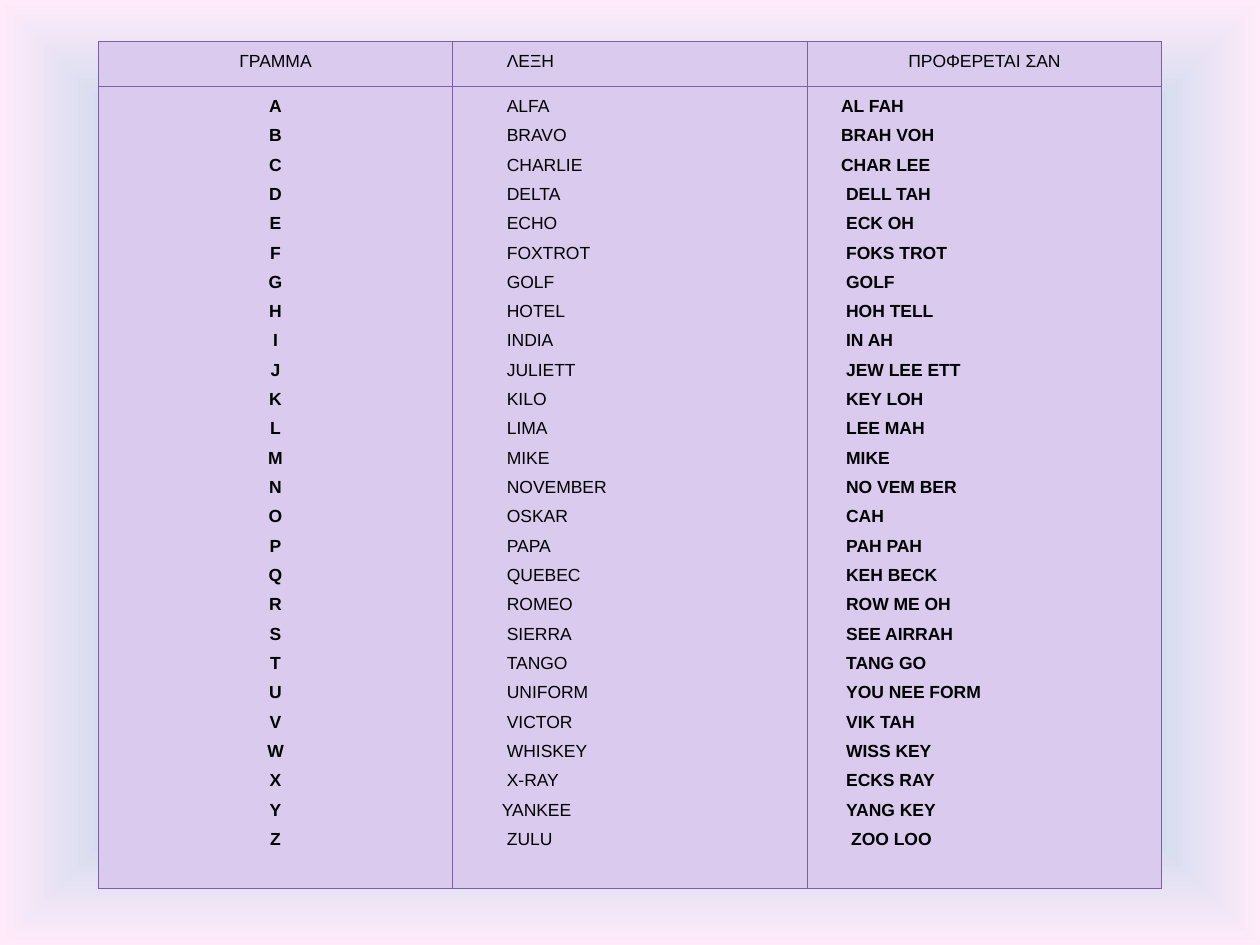
from pptx import Presentation, util as u
from pptx.dml.color import RGBColor
from pptx.enum import text
from pptx.oxml import parse_xml
from pptx.oxml.ns import nsdecls

# Content: letter, word, pronunciation
HEADS = ["ΓΡΑΜΜΑ", "ΛΕΞΗ", "ΠΡΟΦΕΡΕΤΑΙ ΣΑΝ"]
CODES = [
    ("Α", "ALFA", "AL FAH"), ("Β", "BRAVO", "BRAH VOH"),
    ("C", "CHARLIE", "CHAR LEE"), ("D", "DELTA", "DELL TAH"),
    ("E", "ECHO", "ECK OH"), ("F", "FOXTROT", "FOKS TROT"),
    ("G", "GOLF", "GOLF"), ("H", "HOTEL", "HOH TELL"),
    ("I", "INDIA", "IN AH"), ("J", "JULIETT", "JEW LEE ETT"),
    ("K", "KILO", "KEY LOH"), ("L", "LIMA", "LEE MAH"),
    ("M", "MIKE", "MIKE"), ("N", "NOVEMBER", "NO VEM BER"),
    ("O", "OSKAR", "CAH"), ("P", "PAPA", "PAH PAH"),
    ("Q", "QUEBEC", "KEH BECK"), ("R", "ROMEO", "ROW ME OH"),
    ("S", "SIERRA", "SEE AIRRAH"), ("T", "TANGO", "TANG GO"),
    ("U", "UNIFORM", "YOU NEE FORM"), ("V", "VICTOR", "VIK TAH"),
    ("W", "WHISKEY", "WISS KEY"), ("X", "X-RAY", "ECKS RAY"),
    ("Y", "YANKEE", "YANG KEY"), ("Z", "ZULU", "ZOO LOO"),
]
STOPS = [(0, "B9CDE5"), (40, "85C2FF"), (70, "C4D6EB"), (100, "FFEBFA")]
FILL, LINE, INK = "DACAEE", "7D60A0", "000000"
ROWS = [0.36, 6.36]
WIDE = 8.44

# Indents in inches; a few lines differ from their column
WORD, SAY = 0.39, 0.23
ODD = {"YANKEE": 0.35, "ZOO LOO": 0.31}
NEAR = {"AL FAH", "BRAH VOH", "CHAR LEE"}


def hue(code):
    return RGBColor.from_string(code)


def indent(col, line):
    if col == 2 and line not in NEAR:
        return ODD.get(line, SAY + 0.04)
    return ODD.get(line, (0, WORD, SAY)[col])


def border(cell):
    for side in "LRTB":
        cell._tc.get_or_add_tcPr().append(parse_xml(
            f'<a:ln{side} {nsdecls("a")} w="{u.Pt(0.75)}"><a:solidFill>'
            f'<a:srgbClr val="{LINE}"/></a:solidFill></a:ln{side}>'))


def write(cell, lines, col, head):
    border(cell)
    cell.fill.solid()
    cell.fill.fore_color.rgb = hue(FILL)
    cell.margin_left = cell.margin_right = u.Inches(0.04)
    cell.margin_top = cell.margin_bottom = 0
    cell.text_frame.text = "\n".join(lines)
    mid = col == 0 or (head and col == 2)
    for par in cell.text_frame.paragraphs:
        par.line_spacing = 1.5
        par.alignment = text.PP_ALIGN.CENTER if mid else text.PP_ALIGN.JUSTIFY
        if not mid:
            left = u.Inches(indent(col, par.text))
            par._p.get_or_add_pPr().set("marL", str(left))
        font = par.runs[0].font
        font.name, font.size = "Arial", u.Pt(10)
        font.bold = not head and col != 1
        font.color.rgb = hue(INK)


deck = Presentation()
deck.slide_width, deck.slide_height = u.Inches(10), u.Inches(7.5)
slide = deck.slides.add_slide(deck.slide_layouts[6])

# Background gradient, from the centre to the edges
stops = "".join(f'<a:gs pos="{at * 1000}"><a:srgbClr val="{code}"/></a:gs>'
                for at, code in STOPS)
slide._element.cSld.insert(0, parse_xml(
    f'<p:bg {nsdecls("p", "a")}><p:bgPr><a:gradFill rotWithShape="1">'
    f'<a:gsLst>{stops}</a:gsLst><a:path path="shape"><a:fillToRect '
    'l="50000" t="50000" r="50000" b="50000"/></a:path></a:gradFill>'
    '<a:effectLst/></p:bgPr></p:bg>'))

# Table: a heading row and one tall row of lines
grid = slide.shapes.add_table(
    2, 3, u.Inches((10 - WIDE) / 2), u.Inches(0.33),
    u.Inches(WIDE), u.Inches(sum(ROWS))).table
for row, tall in zip(grid.rows, ROWS):
    row.height = u.Inches(tall)
for col, (head, lines) in enumerate(zip(HEADS, zip(*CODES))):
    write(grid.cell(0, col), [head], col, True)
    write(grid.cell(1, col), lines, col, False)

deck.save("out.pptx")
